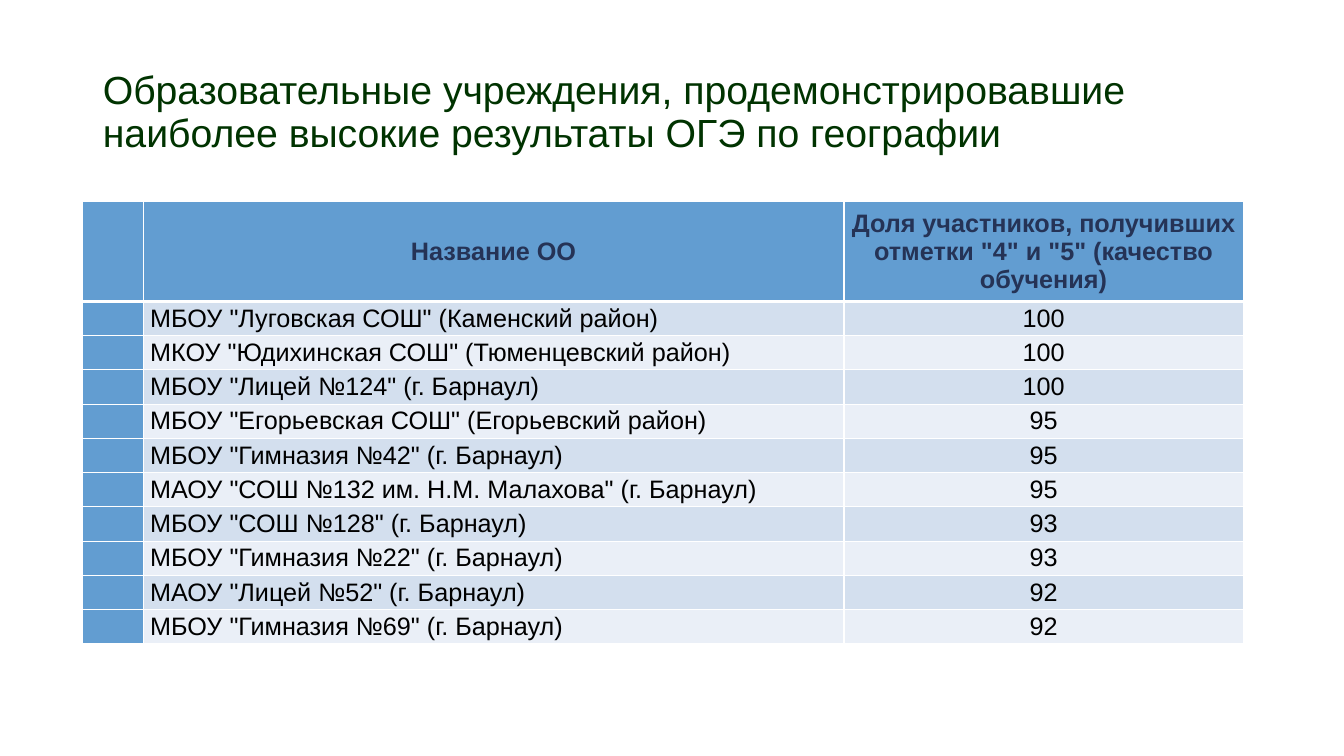
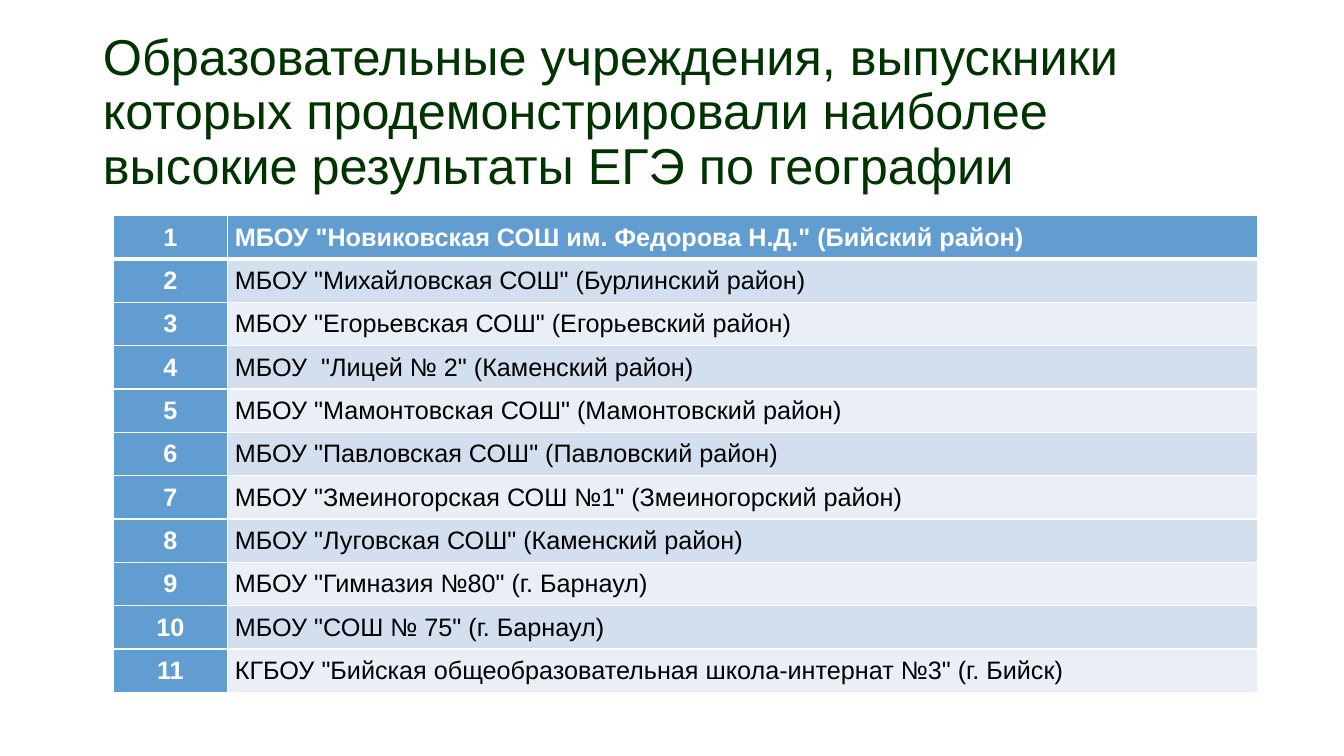
from pptx import Presentation
from pptx import util as u
from pptx.dml.color import RGBColor
from pptx.enum import text
from pptx.oxml import parse_xml
from pptx.oxml.ns import nsdecls

C = {"title": "003300", "head": "629DD1", "navy": "253356", "odd": "D3DFEE",
     "even": "EAEFF7", "white": "FFFFFF", "black": "000000"}
FONT = "Arial"
W, H = 13.33, 7.5
MID = text.MSO_ANCHOR.MIDDLE
LEFT, CENTER = text.PP_ALIGN.LEFT, text.PP_ALIGN.CENTER

schools_oge = [
    ('МБОУ "Луговская СОШ" (Каменский район)', 100),
    ('МКОУ "Юдихинская СОШ" (Тюменцевский район)', 100),
    ('МБОУ "Лицей №124" (г. Барнаул)', 100),
    ('МБОУ "Егорьевская СОШ" (Егорьевский район)', 95),
    ('МБОУ "Гимназия №42" (г. Барнаул)', 95),
    ('МАОУ "СОШ №132 им. Н.М. Малахова" (г. Барнаул)', 95),
    ('МБОУ "СОШ №128" (г. Барнаул)', 93),
    ('МБОУ "Гимназия №22" (г. Барнаул)', 93),
    ('МАОУ "Лицей №52" (г. Барнаул)', 92),
    ('МБОУ "Гимназия №69" (г. Барнаул)', 92),
]
schools_ege = [
    'МБОУ "Новиковская СОШ им. Федорова Н.Д." (Бийский район)',
    'МБОУ "Михайловская СОШ" (Бурлинский район)',
    'МБОУ "Егорьевская СОШ" (Егорьевский район)',
    'МБОУ  "Лицей № 2" (Каменский район)',
    'МБОУ "Мамонтовская СОШ" (Мамонтовский район)',
    'МБОУ "Павловская СОШ" (Павловский район)',
    'МБОУ "Змеиногорская СОШ №1" (Змеиногорский район)',
    'МБОУ "Луговская СОШ" (Каменский район)',
    'МБОУ "Гимназия №80" (г. Барнаул)',
    'МБОУ "СОШ № 75" (г. Барнаул)',
    'КГБОУ "Бийская общеобразовательная школа-интернат №3" (г. Бийск)',
]
head_oge = ("", "Название ОО",
            'Доля участников, получивших отметки "4" и "5" (качество обучения)')

slides = [
    {"title": "Образовательные учреждения, продемонстрировавшие наиболее высокие результаты ОГЭ по географии",
     "size": 28, "at": (0.82, 2), "cols": (0.6, 6.95, 3.96), "first": 0.99, "row": 0.34,
     "head_color": "navy", "head_align": (CENTER, CENTER, CENTER), "align": (CENTER, LEFT, CENTER),
     "rows": [head_oge] + [("", name, share) for name, share in schools_oge]},
    {"title": "Образовательные учреждения, выпускники которых продемонстрировали наиболее высокие результаты ЕГЭ по географии",
     "size": 36, "at": (1.12, 2.14), "cols": (1.14, 10.21), "first": 0.43, "row": 0.43,
     "head_color": "white", "head_align": (CENTER, LEFT), "align": (CENTER, LEFT),
     "rows": list(enumerate(schools_ege, 1))},
]


def style(font, size, color, bold=False):
    for key, value in {"name": FONT, "size": u.Pt(size), "bold": bold}.items():
        setattr(font, key, value)
    font.color.rgb = RGBColor.from_string(C[color])


def border(cell, side, width):
    cell._tc.get_or_add_tcPr().append(parse_xml(
        f'<a:{side} {nsdecls("a")} w="{u.Pt(width)}"><a:solidFill>'
        f'<a:srgbClr val="{C["white"]}"/></a:solidFill></a:{side}>'))


prs = Presentation()
prs.slide_width, prs.slide_height = u.Inches(W), u.Inches(H)
layout = prs.slide_layouts[5]
title_box = {"left": 0.92, "top": 0.4, "width": 11.5, "height": 1.45}
title_frame = {"vertical_anchor": MID, "word_wrap": True, "auto_size": text.MSO_AUTO_SIZE.NONE,
               **{f"margin_{side}": u.Inches(0.1) for side in ("left", "top", "right", "bottom")}}
cell_format = {"vertical_anchor": MID, "margin_left": u.Inches(0.07),
               "margin_right": u.Inches(0.07), "margin_top": 0, "margin_bottom": 0}

for d in slides:
    s = prs.slides.add_slide(layout)
    sp = s.shapes.title
    for key, value in title_box.items():
        setattr(sp, key, u.Inches(value))
    tf = sp.text_frame
    for key, value in title_frame.items():
        setattr(tf, key, value)
    p = tf.paragraphs[0]
    p.alignment, p.line_spacing = LEFT, 0.9
    r = p.add_run()
    r.text = d["title"]
    style(r.font, d["size"], "title")

    n = len(d["rows"])
    heights = [d["first"]] + [d["row"]] * (n - 1)
    box = [u.Inches(v) for v in (*d["at"], sum(d["cols"]), sum(heights))]
    table = s.shapes.add_table(n, len(d["cols"]), *box).table
    table.first_col = True
    for col, width in zip(table.columns, d["cols"]):
        col.width = u.Inches(width)
    for i, values in enumerate(d["rows"]):
        table.rows[i].height = u.Inches(heights[i])
        aligns = d["align"] if i else d["head_align"]
        for j, value in enumerate(values):
            cell = table.cell(i, j)
            accent = i == 0 or j == 0
            for key, setting in cell_format.items():
                setattr(cell, key, setting)
            for side in ("lnL", "lnR", "lnT", "lnB"):
                thick = (i == 0 and side == "lnB") or (i == 1 and side == "lnT")
                border(cell, side, 3 if thick else 1)
            cell.fill.solid()
            cell.fill.fore_color.rgb = RGBColor.from_string(
                C["head" if accent else "odd" if i % 2 else "even"])
            p = cell.text_frame.paragraphs[0]
            p.alignment = aligns[j]
            if value != "":
                r = p.add_run()
                r.text = str(value)
                color = d["head_color"] if i == 0 else "white" if j == 0 else "black"
                style(r.font, 18, color, accent)

prs.save("out.pptx")
